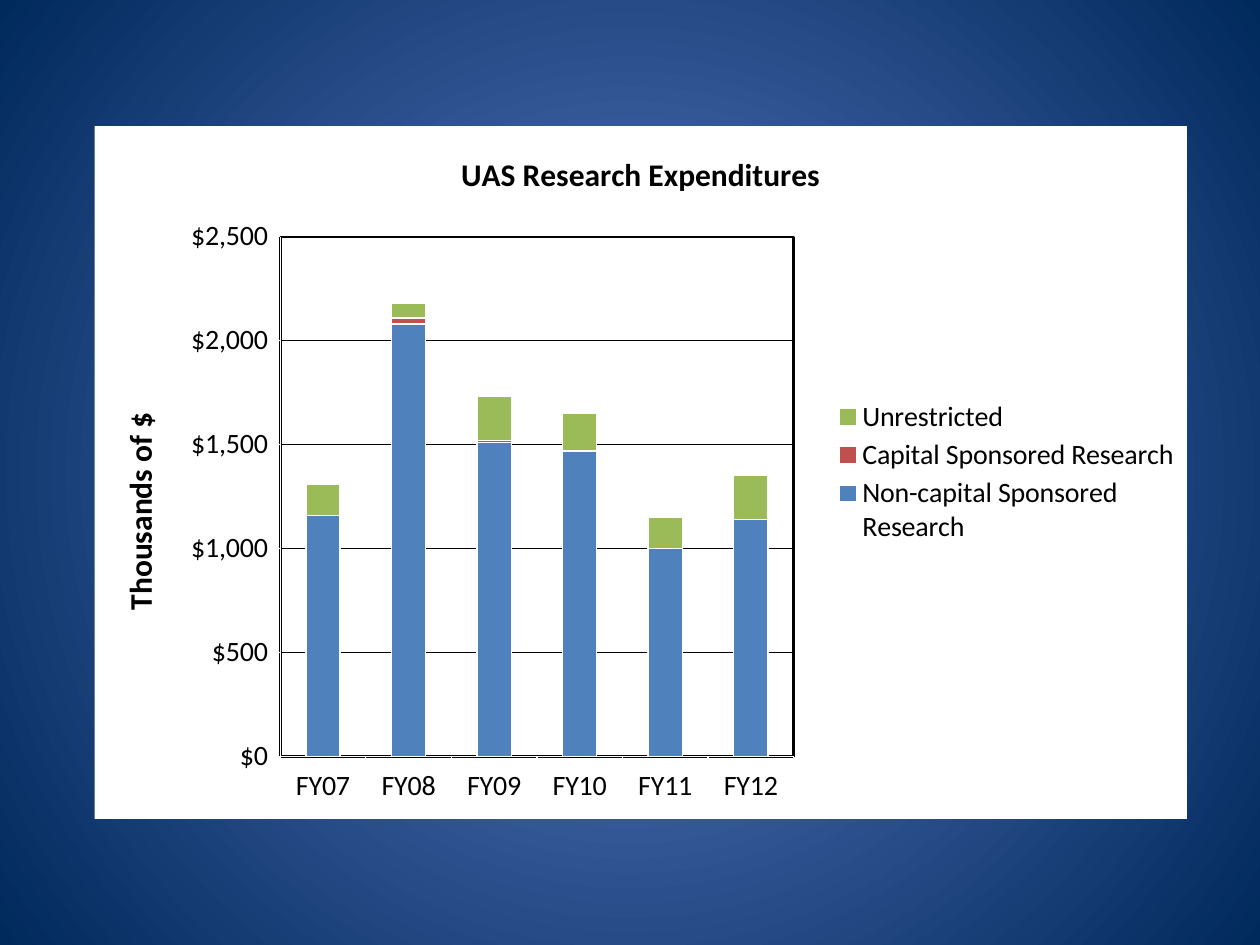
"""Build a slide with a stacked column chart of UAS research expenditures."""
import dataclasses

import lxml.etree
import pptx
import pptx.chart.data
import pptx.dml.color
import pptx.enum.chart
import pptx.oxml
import pptx.oxml.ns
import pptx.util


@dataclasses.dataclass(frozen=True)
class Theme:
    """Colours, font and type sizes of the slide."""
    glow: str = "5E7CC5"
    edge: str = "00295C"
    panel: str = "FFFFFF"
    ink: str = "000000"
    noncapital: str = "4F81BD"
    capital: str = "C0504D"
    unrestricted: str = "9BBB59"
    font: str = "Calibri"
    body: int = 16
    heading: int = 18


THEME = Theme()
COLUMNS, ROWS = 40, 30
YEARS = [f"FY{year:02}" for year in range(7, 13)]
EXPENDITURES = [
    ("Non-capital Sponsored Research", THEME.noncapital, (1160, 2080, 1510, 1470, 1000, 1140)),
    ("Capital Sponsored Research", THEME.capital, (0, 30, 10, 0, 0, 0)),
    ("Unrestricted", THEME.unrestricted, (150, 70, 210, 180, 150, 210)),
]


def apply_format(target, values):
    """Set each named attribute of the target."""
    for name, value in values.items():
        setattr(target, name, value)


def rgb(value):
    """Turn a hex string into a colour."""
    return pptx.dml.color.RGBColor.from_string(value)


def style_line(line, color, width):
    """Give a line its colour and its width in points."""
    line.color.rgb = rgb(color)
    line.width = pptx.util.Pt(width)


def style_title(owner, text):
    """Write a bold heading on a chart or an axis."""
    owner.has_title = True
    frame = owner.chart_title.text_frame if hasattr(owner, "chart_title") else owner.axis_title.text_frame
    frame.text = text
    font = frame.paragraphs[0].runs[0].font
    apply_format(font, {"name": THEME.font, "size": pptx.util.Pt(THEME.heading), "bold": True})
    font.color.rgb = rgb(THEME.ink)


def shape_properties(fill, outline, width=0):
    """Make chart shape properties with a fill and an outline."""
    paint = '<a:solidFill><a:srgbClr val="{}"/></a:solidFill>'
    line = paint.format(outline) if outline else "<a:noFill/>"
    return pptx.oxml.parse_xml(
        f'<c:spPr {pptx.oxml.ns.nsdecls("c", "a")}>{paint.format(fill)}'
        f'<a:ln w="{pptx.util.Pt(width)}">{line}</a:ln></c:spPr>')


def place_inside(part, index, box, inner=False):
    """Lay out a chart part by shares of the chart's box."""
    for old in part.findall(pptx.oxml.ns.qn("c:layout")):
        part.remove(old)
    target = '<c:layoutTarget val="inner"/>' if inner else ""
    modes = "".join(f'<c:{axis}Mode val="edge"/>' for axis in "xy")
    shares = "".join(f'<c:{side} val="{share}"/>' for side, share in zip("xywh", box))
    part.insert(index, pptx.oxml.parse_xml(
        f'<c:layout {pptx.oxml.ns.nsdecls("c")}><c:manualLayout>{target}{modes}{shares}'
        '</c:manualLayout></c:layout>'))


def paint_background(slide):
    """Fill the slide with a glow from its centre."""
    fill = slide.background.fill
    fill.gradient()
    for stop, color in zip(fill.gradient_stops, (THEME.glow, THEME.edge)):
        stop.color.rgb = rgb(color)
    qn = pptx.oxml.ns.qn
    direction = next(slide.element.iter(qn("a:lin")))
    glow = lxml.etree.Element(qn("a:path"), {"path": "circle"})
    lxml.etree.SubElement(glow, qn("a:fillToRect"), dict.fromkeys("ltrb", "50000"))
    direction.getparent().replace(direction, glow)


def style_axes(chart):
    """Format the year and dollar axes."""
    dollars, years = chart.value_axis, chart.category_axis
    apply_format(dollars, {"minimum_scale": 0, "maximum_scale": 2500, "major_unit": 500,
                           "has_major_gridlines": True})
    apply_format(dollars.tick_labels, {"number_format": '"$"#,##0', "number_format_is_linked": False})
    style_line(dollars.major_gridlines.format.line, THEME.ink, 0.75)
    for axis in (dollars, years):
        axis.major_tick_mark = pptx.enum.chart.XL_TICK_MARK.OUTSIDE
        style_line(axis.format.line, THEME.panel, 0.75)
    style_title(dollars, "Thousands of $")


def add_expenditures(slide, box):
    """Place the expenditure chart in the given box."""
    data = pptx.chart.data.CategoryChartData()
    data.categories = YEARS
    for name, _, values in EXPENDITURES:
        data.add_series(name, values)
    chart = slide.shapes.add_chart(pptx.enum.chart.XL_CHART_TYPE.COLUMN_STACKED, *box, data).chart
    apply_format(chart.font, {"name": THEME.font, "size": pptx.util.Pt(THEME.body)})
    chart.font.color.rgb = rgb(THEME.ink)
    style_title(chart, "UAS Research Expenditures")
    style_axes(chart)
    plot = chart.plots[0]
    apply_format(plot, {"gap_width": 150, "overlap": 100, "vary_by_categories": False})
    for series, (_, color, _) in zip(plot.series, EXPENDITURES):
        series.format.fill.solid()
        series.format.fill.fore_color.rgb = rgb(color)
        style_line(series.format.line, THEME.panel, 0.75)
    chart.has_legend = True
    apply_format(chart.legend, {"position": pptx.enum.chart.XL_LEGEND_POSITION.RIGHT,
                                "include_in_layout": False})
    place_inside(chart.legend._element, 1, (0.67, 0.39, 0.33, 0.22))
    space = chart._chartSpace
    area = space.chart.plotArea
    place_inside(area, 0, (0.17, 0.16, 0.47, 0.75), inner=True)
    area.append(shape_properties(THEME.panel, THEME.ink, 1.5))
    space.chart.addnext(shape_properties(THEME.panel, None))


def main():
    """Build and save the slide."""
    deck = pptx.Presentation()
    apply_format(deck, {"slide_width": pptx.util.Inches(10), "slide_height": pptx.util.Inches(7.5)})
    slide = deck.slides.add_slide(deck.slide_layouts[6])
    column, row = deck.slide_width // COLUMNS, deck.slide_height // ROWS
    paint_background(slide)
    add_expenditures(slide, (3 * column, 4 * row, int(34.68 * column), 22 * row))
    deck.save("out.pptx")


if __name__ == "__main__":
    main()
